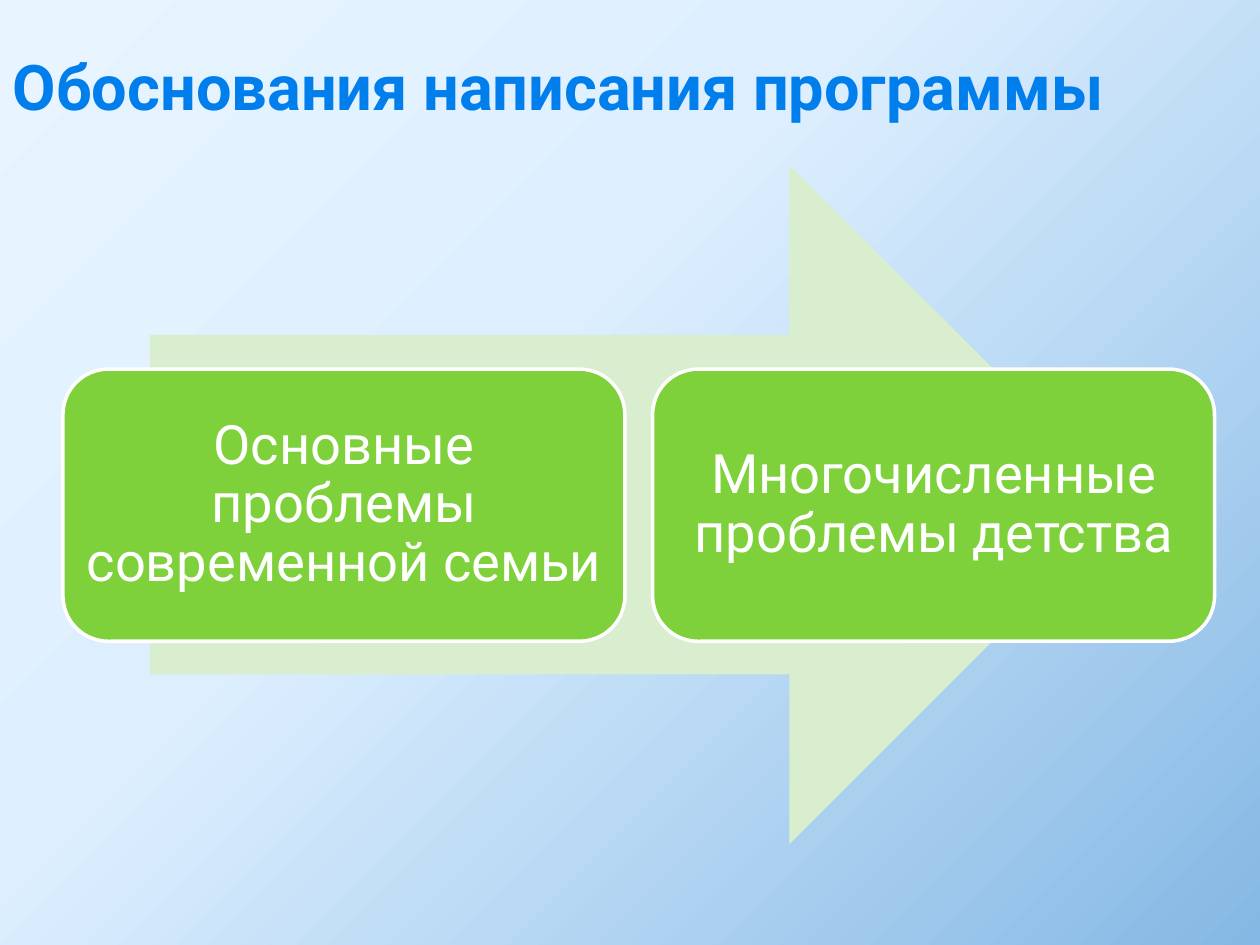
from dataclasses import dataclass

from pptx import Presentation
from pptx.dml.color import RGBColor
from pptx.enum.shapes import MSO_SHAPE as Shape
from pptx.enum.text import MSO_ANCHOR as Anchor, MSO_AUTO_SIZE as AutoSize, PP_ALIGN as Align
from pptx.oxml import parse_xml
from pptx.oxml.ns import nsdecls
from pptx.util import Inches, Pt


@dataclass(frozen=True)
class Theme:
    font: str = "Roboto"
    title: str = "007EEB"
    arrow: str = "D8EECE"
    card: str = "7FD13B"
    light: str = "FFFFFF"
    title_size: int = 36
    card_size: int = 31
    backdrop: tuple = ((0, "E8F4FF"), (40, "DDEFFF"), (100, "85B8E4"))


THEME = Theme()
CARDS = ("Основные проблемы современной семьи", "Многочисленные проблемы детства")
CARD_LEFT, CARD_TOP, CARD_WIDTH, CARD_HEIGHT = 0.5, 2.93, 4.46, 2.16
CARD_GAP = 0.22


def paint_background(page):
    fill = page.background.fill
    fill.solid()
    stops = "".join(
        f'<a:gs pos="{place * 1000}"><a:srgbClr val="{color}"/></a:gs>'
        for place, color in THEME.backdrop
    )
    gradient = parse_xml(
        f'<a:gradFill {nsdecls("a")} rotWithShape="1"><a:gsLst>{stops}</a:gsLst>'
        '<a:path path="circle">'
        '<a:fillToRect l="-24000" t="-20000" r="124000" b="120000"/>'
        "</a:path></a:gradFill>"
    )
    properties = page.background._cSld.bg.bgPr
    properties.replace(properties[0], gradient)


def style_text(para, size, color, bold=False):
    for span in para.runs:
        span.font.name = THEME.font
        span.font.size = Pt(size)
        span.font.bold = bold
        span.font.color.rgb = RGBColor.from_string(color)


def set_title(page, text):
    title = page.shapes.title
    title.left, title.top = Inches(0), Inches(0)
    title.width, title.height = Inches(10), Inches(1.31)
    frame = title.text_frame
    frame.text = text
    frame.auto_size = AutoSize.NONE
    frame.vertical_anchor = Anchor.BOTTOM
    frame.margin_bottom = Inches(0.33)
    para = frame.paragraphs[0]
    para.alignment = Align.LEFT
    para.line_spacing = Pt(20)
    style_text(para, THEME.title_size, THEME.title, bold=True)


def add_block(page, preset, left, top, width, height, color):
    block = page.shapes.add_shape(
        preset, Inches(left), Inches(top), Inches(width), Inches(height)
    )
    block.shadow.inherit = False
    block.fill.solid()
    block.fill.fore_color.rgb = RGBColor.from_string(color)
    block.line.fill.background()
    return block


def add_card(page, left, text):
    card = add_block(
        page, Shape.ROUNDED_RECTANGLE, left, CARD_TOP, CARD_WIDTH, CARD_HEIGHT, THEME.card
    )
    card.line.color.rgb = RGBColor.from_string(THEME.light)
    card.line.width = Pt(2)
    frame = card.text_frame
    frame.text = text
    frame.word_wrap = True
    frame.vertical_anchor = Anchor.MIDDLE
    frame.margin_left = frame.margin_right = Inches(0.03)
    para = frame.paragraphs[0]
    para.alignment = Align.CENTER
    para.line_spacing = 0.9
    style_text(para, THEME.card_size, THEME.light)


def main():
    deck = Presentation()
    deck.slide_width, deck.slide_height = Inches(10), Inches(7.5)
    page = deck.slides.add_slide(deck.slide_layouts[5])
    paint_background(page)
    set_title(page, "Обоснования написания программы")
    add_block(page, Shape.RIGHT_ARROW, 1.19, 1.31, 7.77, 5.39, THEME.arrow)
    for index, text in enumerate(CARDS):
        add_card(page, CARD_LEFT + index * (CARD_WIDTH + CARD_GAP), text)
    deck.save("out.pptx")


if __name__ == "__main__":
    main()
